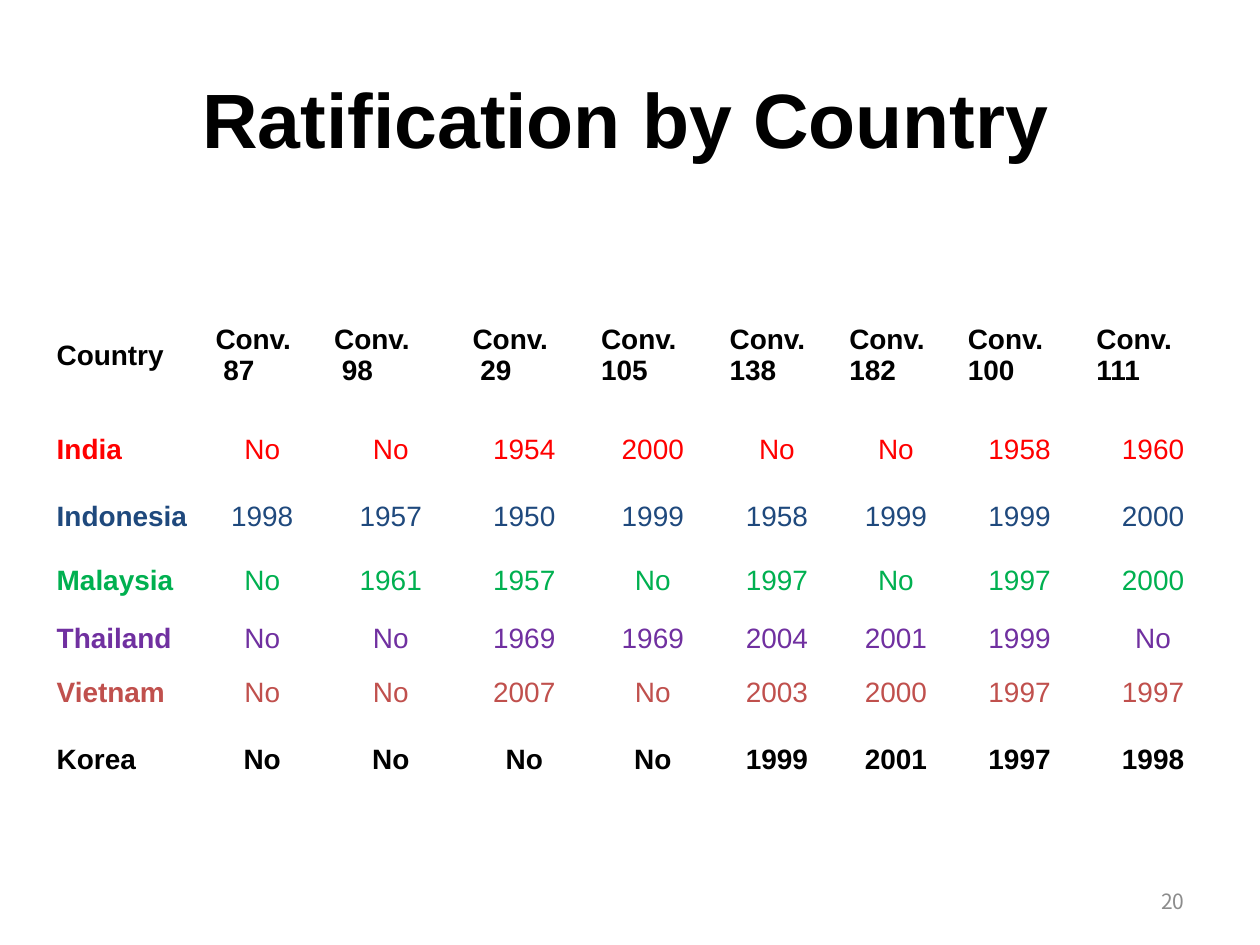
from pptx import Presentation
from pptx.dml.color import RGBColor
from pptx.enum.text import MSO_ANCHOR, PP_ALIGN
from pptx.util import Cm, Pt

BLACK = RGBColor(0x00, 0x00, 0x00)
RED = RGBColor(0xFF, 0x00, 0x00)
NAVY = RGBColor(0x1F, 0x49, 0x7D)
GREEN = RGBColor(0x00, 0xB0, 0x50)
PURPLE = RGBColor(0x70, 0x30, 0xA0)
BRICK = RGBColor(0xC0, 0x50, 0x4D)
GREY = RGBColor(0x8C, 0x8C, 0x8C)

WIDTHS = [3.2, 2.39, 2.79, 2.59, 2.59, 2.41, 2.39, 2.59, 2.79]
HEIGHTS = [2.49, 1.3, 1.4, 1.19, 1.14, 1.07, 1.6]
HEADS = ["Country"] + [
    f"Conv.\n{code}"
    for code in (" 87", " 98", " 29", "105", "138", "182", "100", "111")
]
ROWS = [
    (RED, False, "India No No 1954 2000 No No 1958 1960"),
    (NAVY, False, "Indonesia 1998 1957 1950 1999 1958 1999 1999 2000"),
    (GREEN, False, "Malaysia No 1961 1957 No 1997 No 1997 2000"),
    (PURPLE, False, "Thailand No No 1969 1969 2004 2001 1999 No"),
    (BRICK, False, "Vietnam No No 2007 No 2003 2000 1997 1997"),
    (BLACK, True, "Korea No No No No 1999 2001 1997 1998"),
]


def style(frame, size, color, bold=False, align=PP_ALIGN.LEFT, font="Arial"):
    """Format every run of a text frame."""
    for para in frame.paragraphs:
        para.alignment = align
        for run in para.runs:
            run.font.name = font
            run.font.size = Pt(size)
            run.font.bold = bold
            run.font.color.rgb = color


def place(shape, box):
    """Move a shape to a box given in centimetres."""
    shape.left, shape.top, shape.width, shape.height = map(Cm, box)


def add_title(slide, box):
    """Fill the title placeholder."""
    title = slide.shapes.title
    place(title, box)
    title.text_frame.text = "Ratification by Country"
    title.text_frame.vertical_anchor = MSO_ANCHOR.MIDDLE
    style(title.text_frame, 44, BLACK, True, PP_ALIGN.CENTER)


def fill_row(row, texts, color, bold, align):
    """Write one table row, with its first cell bold and left-aligned."""
    for col, (cell, text) in enumerate(zip(row.cells, texts)):
        cell.fill.background()
        cell.vertical_anchor = MSO_ANCHOR.MIDDLE
        cell.text_frame.text = text
        side = align if col else PP_ALIGN.LEFT
        style(cell.text_frame, 16, color, bold or col == 0, side)


def add_grid(slide, box):
    """Add the table of ratification years, scaled to its box."""
    frame = slide.shapes.add_table(len(HEIGHTS), len(WIDTHS), *map(Cm, box))
    table = frame.table
    table.first_row = table.horz_banding = False
    for col, width in zip(table.columns, WIDTHS):
        col.width = Cm(width * box[2] / sum(WIDTHS))
    for row, height in zip(table.rows, HEIGHTS):
        row.height = Cm(height * box[3] / sum(HEIGHTS))
    fill_row(table.rows[0], HEADS, BLACK, True, PP_ALIGN.LEFT)
    for index, (color, bold, line) in enumerate(ROWS, 1):
        fill_row(table.rows[index], line.split(), color, bold, PP_ALIGN.CENTER)


def add_number(slide, box):
    """Add the page number."""
    frame = slide.shapes.add_textbox(*map(Cm, box)).text_frame
    frame.word_wrap = True
    frame.vertical_anchor = MSO_ANCHOR.MIDDLE
    frame.text = "20"
    style(frame, 12, GREY, align=PP_ALIGN.RIGHT, font="Noto Sans CJK KR")


def main():
    """Build and save the slide."""
    deck = Presentation()
    deck.slide_width, deck.slide_height = Cm(25.4), Cm(19.05)
    slide = deck.slides.add_slide(deck.slide_layouts[5])
    add_title(slide, (1.19, 0.79, 22.86, 3.18))
    add_grid(slide, (0.89, 5.92, 23.75, 10.19))
    add_number(slide, (18.2, 17.66, 5.93, 1.01))
    deck.save("out.pptx")


if __name__ == "__main__":
    main()
